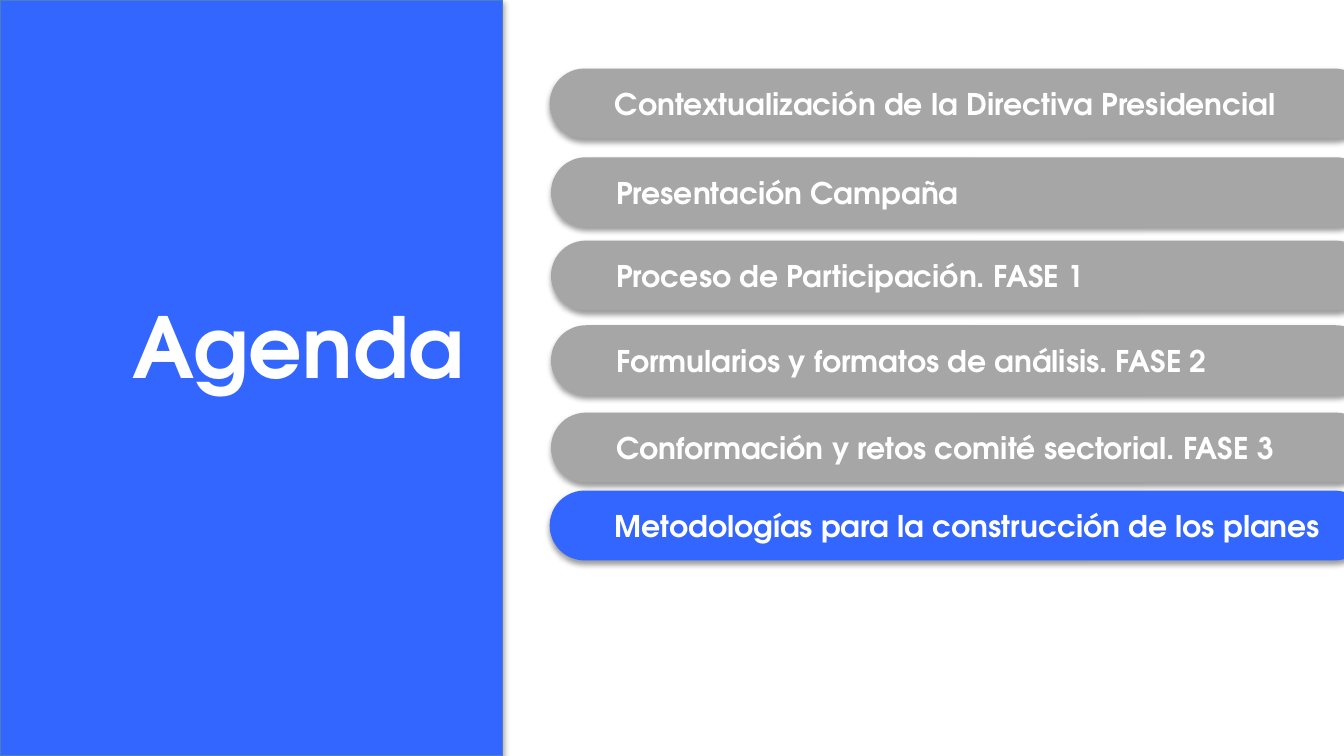
from dataclasses import dataclass

from lxml import etree
from pptx import Presentation
from pptx import util as u
from pptx.dml.color import RGBColor
from pptx.enum import shapes, text
from pptx.oxml.ns import qn


@dataclass(frozen=True)
class Theme:
    font: str = "TeX Gyre Adventor"
    accent: str = "3366FF"
    muted: str = "A6A6A6"
    edge: str = "4B7EBC"
    light: str = "FFFFFF"
    shadow: str = "000000"
    title_size: float = 45
    item_size: float = 16


def rgb(value):
    return RGBColor.from_string(value)


def write(tf, content, *, font, size, color, bold=True,
          align=text.PP_ALIGN.LEFT, anchor=text.MSO_ANCHOR.TOP,
          margins=(0.1, 0.05, 0.1, 0.05)):
    tf.word_wrap = True
    tf.auto_size = text.MSO_AUTO_SIZE.SHAPE_TO_FIT_TEXT
    tf.vertical_anchor = anchor
    tf.margin_left, tf.margin_top, tf.margin_right, tf.margin_bottom = map(u.Inches, margins)
    p = tf.paragraphs[0]
    p.alignment = align
    r = p.add_run()
    r.text = content
    r.font.name = font
    r.font.size = u.Pt(size)
    r.font.bold = bold
    r.font.color.rgb = rgb(color)


class Deck:
    def __init__(self, prs, theme):
        self.theme = theme
        self.s = prs.slides.add_slide(prs.slide_layouts[6])

    def shadow(self, sp, opacity, blur, distance):
        sp.shadow.inherit = False
        effects = sp.element.spPr.find(qn("a:effectLst"))
        outer = etree.SubElement(
            effects, qn("a:outerShdw"), blurRad=str(u.Pt(blur)),
            dist=str(u.Pt(distance)), dir="5400000", rotWithShape="0")
        color = etree.SubElement(outer, qn("a:srgbClr"), val=self.theme.shadow)
        etree.SubElement(color, qn("a:alpha"), val=str(opacity * 1000))

    def box(self, kind, at, fill):
        sp = self.s.shapes.add_shape(kind, *map(u.Inches, at))
        sp.fill.solid()
        sp.fill.fore_color.rgb = rgb(fill)
        return sp

    def panel(self, *at):
        sp = self.box(shapes.MSO_SHAPE.RECTANGLE, at, self.theme.accent)
        sp.line.color.rgb = rgb(self.theme.edge)
        sp.line.width = u.Pt(0.75)
        self.shadow(sp, 35, 3.1, 1.8)

    def pill(self, content, *at, fill):
        sp = self.box(shapes.MSO_SHAPE.ROUNDED_RECTANGLE, at, fill)
        sp.adjustments[0] = 0.5
        sp.line.fill.background()
        self.shadow(sp, 38, 3.1, 1.6)
        write(sp.text_frame, content, font=self.theme.font,
              size=self.theme.item_size, color=self.theme.light,
              anchor=text.MSO_ANCHOR.MIDDLE, margins=(0.41, 0.05, 0.1, 0.05))

    def title(self, content, *at):
        sp = self.s.shapes.add_textbox(*map(u.Inches, at))
        write(sp.text_frame, content, font=self.theme.font,
              size=self.theme.title_size, color=self.theme.light,
              align=text.PP_ALIGN.RIGHT)


WIDTH = 10
HEIGHT = WIDTH * 9 / 16
AGENDA = [
    ("Contextualización de la Directiva Presidencial", 4.09, 0.51),
    ("Presentación Campaña", 4.1, 1.17),
    ("Proceso de Participación. FASE 1", 4.1, 1.79),
    ("Formularios y formatos de análisis. FASE 2", 4.1, 2.42),
    ("Conformación y retos comité sectorial. FASE 3", 4.1, 3.07),
    ("Metodologías para la construcción de los planes", 4.09, 3.65),
]
CURRENT = len(AGENDA) - 1


def main():
    prs = Presentation()
    prs.slide_width, prs.slide_height = u.Inches(WIDTH), u.Inches(HEIGHT)
    theme = Theme()
    deck = Deck(prs, theme)
    deck.panel(0, 0, 3.74, HEIGHT)
    deck.title("Agenda", -0.35, 2.14, 3.9, 0.86)
    for i, (topic, left, top) in enumerate(AGENDA):
        fill = theme.accent if i == CURRENT else theme.muted
        deck.pill(topic, left, top, 6.1, 0.52, fill=fill)
    prs.save("out.pptx")


if __name__ == "__main__":
    main()
